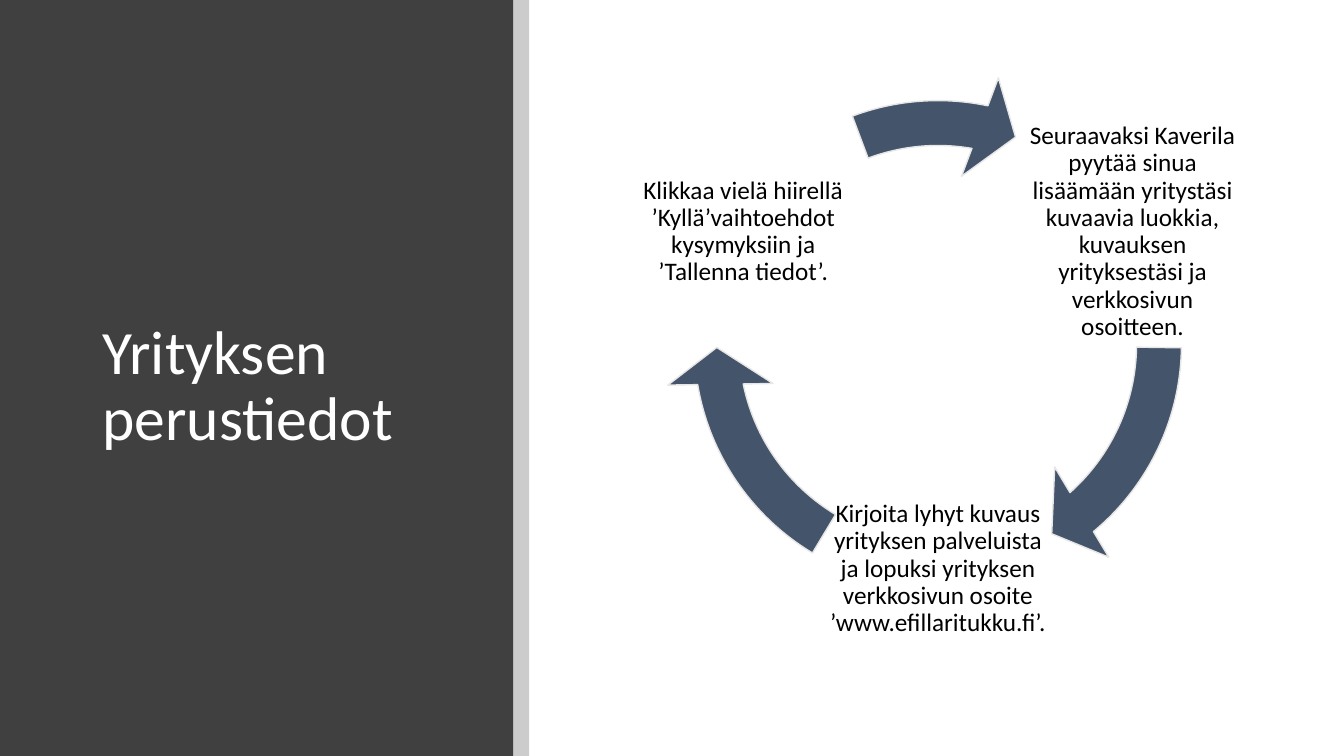
from dataclasses import dataclass
from math import cos, radians, sin

from lxml.etree import SubElement
from pptx import Presentation
from pptx.dml.color import RGBColor
from pptx.enum.shapes import MSO_SHAPE as Preset
from pptx.enum.text import MSO_ANCHOR as Anchor, PP_ALIGN as Align
from pptx.oxml.ns import qn
from pptx.shapes.autoshape import Shape
from pptx.slide import Slide
from pptx.util import Emu, Inches, Pt

# Grid: 160 columns by 90 rows of square cells
COLUMNS, ROWS = 160, 90
CELL = Inches(7.5) / ROWS
FONT = "Calibri"

# Cycle geometry, in cells
CENTRE_X, CENTRE_Y = 111.66, 40.98
RING = 65.16
ORBIT = 26.76
STEP_BOX = 27.6


@dataclass(frozen=True)
class Area:
    column: float
    row: float
    columns: float
    rows: float


@dataclass(frozen=True)
class Step:
    text: str
    angle: float  # place on the orbit, clockwise degrees
    arrow_tip: float
    arrow_tail: float


STEPS = [
    Step("Seuraavaksi Kaverila pyytää sinua lisäämään yritystäsi kuvaavia "
         "luokkia, kuvauksen yrityksestäsi ja verkkosivun osoitteen.",
         -30, 49.42, 0.85),
    Step("Kirjoita lyhyt kuvaus yrityksen palveluista ja lopuksi yrityksen "
         "verkkosivun osoite ’www.efillaritukku.fi’.",
         90, 169.55, 120.99),
    Step("Klikkaa vielä hiirellä ’Kyllä’vaihtoehdot kysymyksiin ja "
         "’Tallenna tiedot’.",
         210, 280.96, 249.44),
]


def cells(count: float) -> Emu:
    return Emu(round(count * CELL))


def colour(hex_value: str) -> RGBColor:
    return RGBColor.from_string(hex_value)


def bounds(area: Area) -> list[Emu]:
    return [cells(n) for n in (area.column, area.row, area.columns, area.rows)]


def square(x: float, y: float, size: float) -> Area:
    return Area(x - size / 2, y - size / 2, size, size)


def add_preset(slide: Slide, preset: Preset, area: Area, fill: str) -> Shape:
    shape = slide.shapes.add_shape(preset, *bounds(area))
    shape.shadow.inherit = False
    shape.fill.solid()
    shape.fill.fore_color.rgb = colour(fill)
    shape.line.fill.background()
    return shape


def add_words(slide: Slide, words: str, area: Area, size: float, ink: str,
              align: Align, inset: tuple[float, float]) -> None:
    frame = slide.shapes.add_textbox(*bounds(area)).text_frame
    frame.word_wrap = True
    frame.vertical_anchor = Anchor.MIDDLE
    frame.margin_left = frame.margin_right = Inches(inset[0])
    frame.margin_top = frame.margin_bottom = Inches(inset[1])
    paragraph = frame.paragraphs[0]
    paragraph.alignment = align
    paragraph.line_spacing = 0.9
    run = paragraph.add_run()
    run.text = words
    run.font.name = FONT
    run.font.size = Pt(size)
    run.font.color.rgb = colour(ink)


def add_step(slide: Slide, step: Step) -> None:
    x = CENTRE_X + ORBIT * cos(radians(step.angle))
    y = CENTRE_Y + ORBIT * sin(radians(step.angle))
    add_words(slide, step.text, square(x, y, STEP_BOX), 18, "000000",
              Align.CENTER, (0.03, 0.03))

    arrow = add_preset(slide, Preset.CIRCULAR_ARROW,
                       square(CENTRE_X, CENTRE_Y, RING), "44546A")
    arrow.line.color.rgb = colour("E7E6E6")
    arrow.line.width = Pt(1)
    # Angles are stored in 60000ths of a degree, adjustments in 100000ths
    head, tip, tail = (deg * 0.6 for deg in (9.6, step.arrow_tip, step.arrow_tail))
    for index, value in enumerate((0.082, head, tip, tail, 0.096)):
        arrow.adjustments[index] = value


def main() -> None:
    deck = Presentation()
    deck.slide_width, deck.slide_height = cells(COLUMNS), cells(ROWS)
    slide = deck.slides.add_slide(deck.slide_layouts[6])

    # Title panel
    add_preset(slide, Preset.RECTANGLE, Area(0, 0, 61.1, ROWS), "404040")
    add_words(slide, "Yrityksen perustiedot", Area(11, 10.7, 43.8, 70.9), 44,
              "FFFFFF", Align.LEFT, (0.1, 0.05))

    # Translucent strip beside the panel
    strip = add_preset(slide, Preset.RECTANGLE, Area(61.1, 0, 1.9, ROWS), "000000")
    strip_ink = strip.fill._xPr.find(qn("a:solidFill"))[0]
    SubElement(strip_ink, qn("a:alpha")).set("val", "20000")

    # Cycle of steps
    for step in STEPS:
        add_step(slide, step)

    deck.save("out.pptx")


if __name__ == "__main__":
    main()
